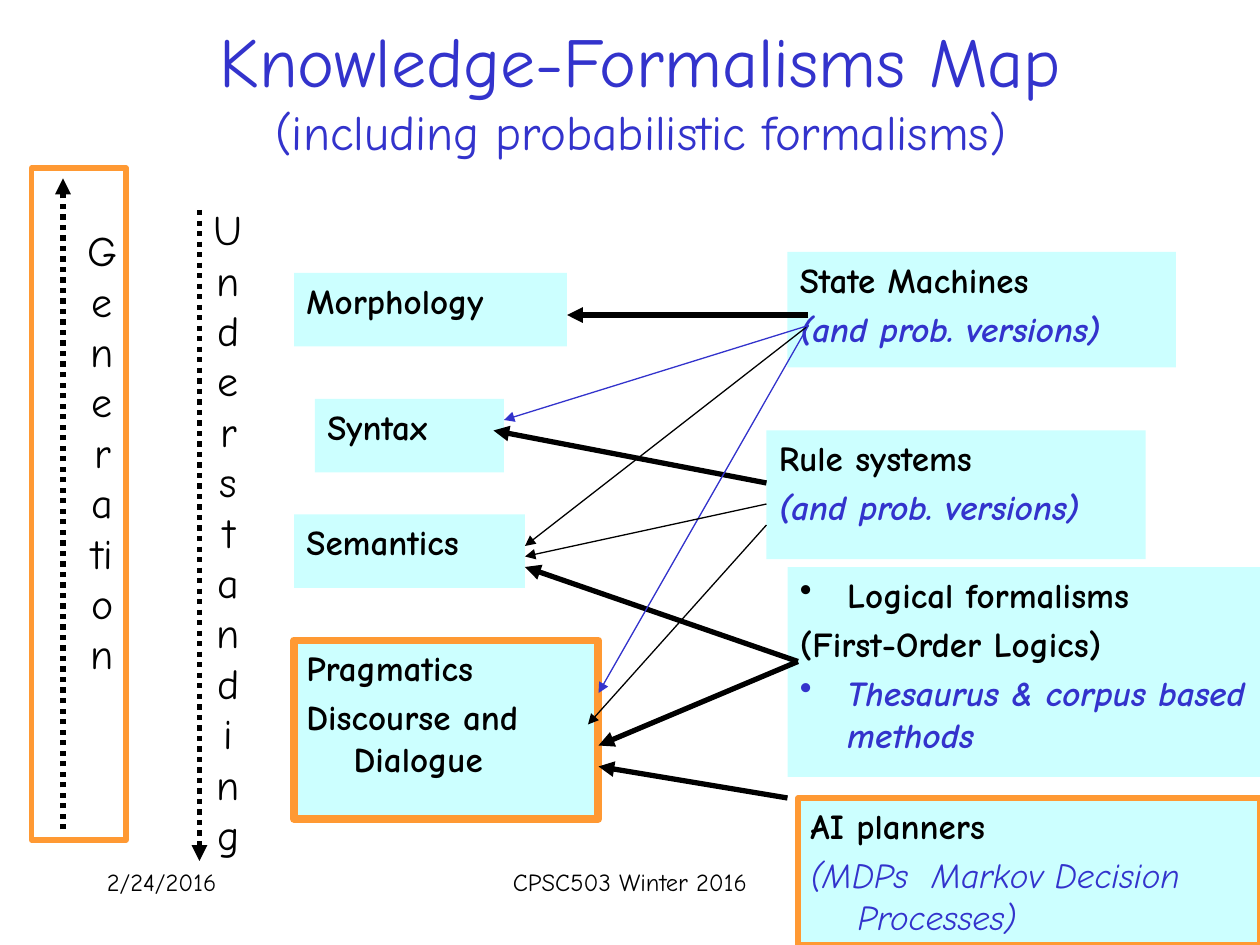
from lxml.etree import SubElement
from pptx import Presentation
from pptx.dml.color import RGBColor
from pptx.enum.dml import MSO_LINE
from pptx.enum.shapes import MSO_CONNECTOR, MSO_SHAPE
from pptx.enum.text import MSO_ANCHOR, PP_ALIGN
from pptx.oxml.ns import qn
from pptx.util import Pt

SCALE = 9525
FONT = "Comic Neue"
BLACK, BLUE, CYAN, ORANGE = "000000", "3333CC", "CCFFFF", "FF9933"
HANGING = 36

PROBABILISTIC = ("(and prob. versions)", "note")
BOXES = [
    ((600, 432, 360, 160), None, [("Logical formalisms", "bullet"),
                                  ("(First-Order Logics)", "plain"),
                                  ("Thesaurus & corpus based methods", "bullet note")]),
    ((584, 328, 289, 98), None, [("Rule systems", "plain"), PROBABILISTIC]),
    ((600, 192, 296, 88), None, [("State Machines", "plain"), PROBABILISTIC]),
    ((224, 208, 208, 56), None, [("Morphology", "plain")]),
    ((240, 304, 144, 56), None, [("Syntax", "plain")]),
    ((224, 488, 232, 136), 4.5, [("Pragmatics", "plain"),
                                 ("Discourse and Dialogue", "plain")]),
    ((224, 392, 176, 56), None, [("Semantics", "plain")]),
    ((608, 608, 352, 112), 3, [("AI planners", "plain"),
                               ("(MDPs  Markov Decision Processes)", "light note")]),
]

ARROWS = [
    ((616, 240), (432, 240), BLACK, 3),
    ((584, 368), (376, 328), BLACK, 3),
    ((608, 504), (400, 432), BLACK, 3),
    ((608, 504), (456, 568), BLACK, 3),
    ((616, 248), (400, 416), BLACK, 0.75),
    ((616, 248), (456, 528), BLUE, 0.75),
    ((584, 384), (400, 424), BLACK, 0.75),
    ((584, 400), (448, 552), BLACK, 0.75),
    ((600, 608), (456, 584), BLACK, 3),
    ((616, 248), (384, 320), BLUE, 0.75),
]


def px(*lengths):
    return [length * SCALE for length in lengths]


def color(value):
    return RGBColor.from_string(value)


def style_paragraph(para, size, value=BLACK, bold=False, italic=False, align=PP_ALIGN.LEFT):
    para.alignment = align
    for span in para.runs:
        span.font.name = FONT
        span.font.size = Pt(size)
        span.font.bold = bold
        span.font.italic = italic
        span.font.color.rgb = color(value)


def hang_paragraph(para, size, bullet=False):
    para.space_before = Pt(size * 0.2)
    properties = para._p.get_or_add_pPr()
    properties.set("marL", str(HANGING * SCALE))
    properties.set("indent", str(-HANGING * SCALE))
    if bullet:
        SubElement(properties, qn("a:buChar")).set("char", "•")
    else:
        SubElement(properties, qn("a:buNone"))


def add_rectangle(page, bounds, fill=None, border=None):
    box = page.shapes.add_shape(MSO_SHAPE.RECTANGLE, *px(*bounds))
    box.shadow.inherit = False
    if fill:
        box.fill.solid()
        box.fill.fore_color.rgb = color(fill)
    else:
        box.fill.background()
    if border:
        box.line.color.rgb = color(ORANGE)
        box.line.width = Pt(border)
    else:
        box.line.fill.background()
    box.text_frame.word_wrap = True
    box.text_frame.vertical_anchor = MSO_ANCHOR.TOP
    return box


def add_topic(page, bounds, border, lines):
    frame = add_rectangle(page, bounds, CYAN, border).text_frame
    frame.text = "\n".join(text for text, style in lines)
    for para, (text, style) in zip(frame.paragraphs, lines):
        note = "note" in style
        style_paragraph(para, 20, BLUE if note else BLACK, "light" not in style, note)
        hang_paragraph(para, 20, "bullet" in style)


def add_label(page, bounds, text, size, align=PP_ALIGN.LEFT, value=BLACK):
    box = page.shapes.add_textbox(*px(*bounds))
    box.text_frame.word_wrap = True
    para = box.text_frame.paragraphs[0]
    para.text = text
    style_paragraph(para, size, value, align=align)
    return box


def add_title(page):
    text = "Knowledge-Formalisms Map\v(including probabilistic formalisms)"
    box = add_label(page, (96, 8, 784, 120), text, 40, PP_ALIGN.CENTER, BLUE)
    box.text_frame.vertical_anchor = MSO_ANCHOR.MIDDLE
    box.text_frame.paragraphs[0].runs[1].font.size = Pt(28)


def add_direction(page, bounds, text, border=None):
    frame = add_rectangle(page, bounds, border=border).text_frame
    para = frame.paragraphs[0]
    para.text = text
    style_paragraph(para, 24, align=PP_ALIGN.CENTER)
    hang_paragraph(para, 24)


def add_arrow(page, start, end, value, width, dash=None):
    arrow = page.shapes.add_connector(MSO_CONNECTOR.STRAIGHT, *px(*start, *end))
    arrow.line.color.rgb = color(value)
    arrow.line.width = Pt(width)
    if dash:
        arrow.line.dash_style = dash
    SubElement(arrow.line._get_or_add_ln(), qn("a:tailEnd")).set("type", "triangle")
    SubElement(arrow._element.spPr, qn("a:effectLst"))


def main():
    deck = Presentation()
    deck.slide_width, deck.slide_height = px(960, 720)
    page = deck.slides.add_slide(deck.slide_layouts[6])

    add_label(page, (72, 656, 200, 48), "2/24/2016", 14)
    add_label(page, (328, 656, 304, 48), "CPSC503 Winter 2016", 14, PP_ALIGN.CENTER)
    add_title(page)
    for bounds, border, lines in BOXES:
        add_topic(page, bounds, border, lines)
    for start, end, value, width in ARROWS:
        add_arrow(page, start, end, value, width)

    add_direction(page, (120, 112, 72, 552), " Understanding ")
    add_direction(page, (24, 128, 72, 512), " Generation", 3)
    add_arrow(page, (48, 632), (48, 136), BLACK, 3, MSO_LINE.ROUND_DOT)
    add_arrow(page, (152, 160), (152, 656), BLACK, 3, MSO_LINE.ROUND_DOT)

    deck.save("out.pptx")


if __name__ == "__main__":
    main()
